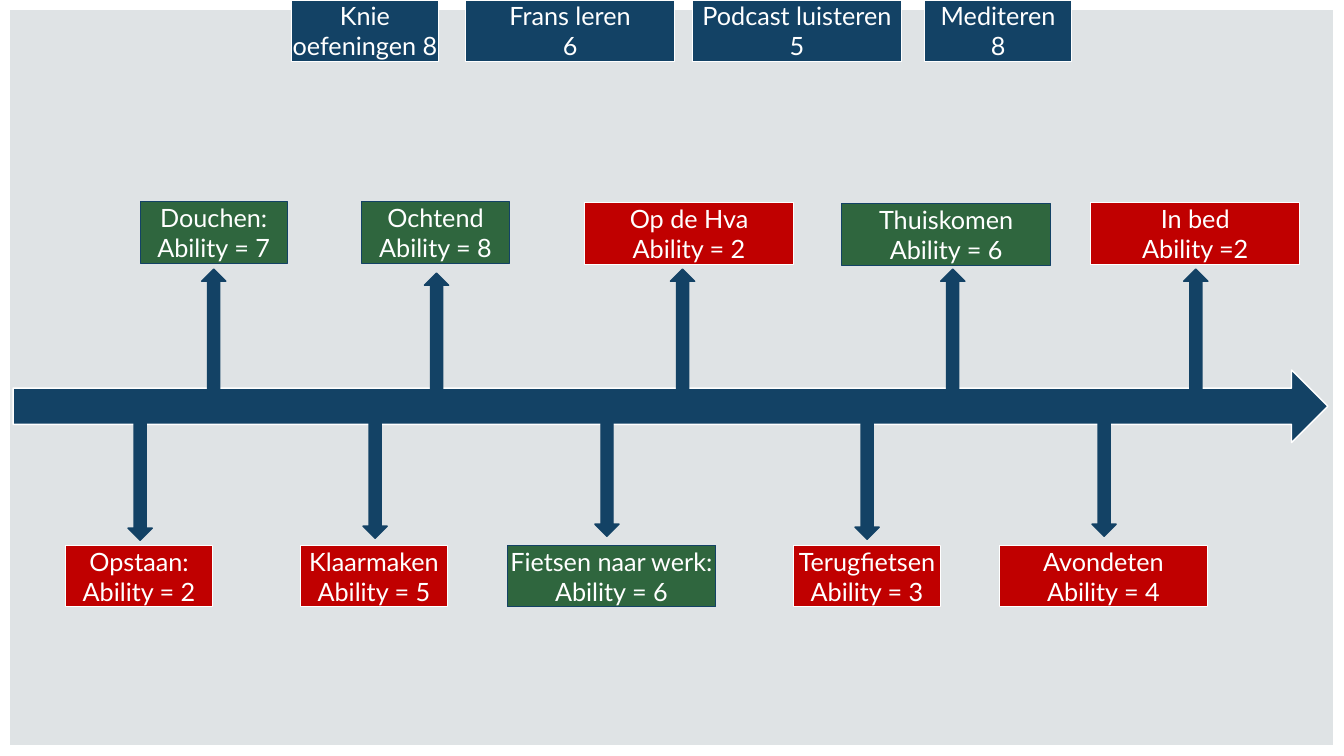
from dataclasses import dataclass

from pptx import Presentation
from pptx.dml.color import RGBColor
from pptx.enum.shapes import MSO_SHAPE as Shape
from pptx.enum.text import MSO_ANCHOR as Anchor, MSO_AUTO_SIZE as AutoSize, PP_ALIGN as Align
from pptx.util import Inches, Pt


@dataclass(frozen=True)
class Theme:
    background: str = "DFE3E5"
    navy: str = "134265"
    red: str = "C00000"
    green: str = "2F663E"
    white: str = "FFFFFF"
    font: str = "Lato"
    size: float = 18
    frame_line: float = 15
    arrow_line: float = 1
    box_line: float = 0.75


THEME = Theme()
WIDTH, HEIGHT = 13.33, 7.5
NARROW, WIDE, BOX_HEIGHT = 1.46, 2.07, 0.61
POINTER_WIDTH, POINTER_HEIGHT = 0.24, 1.25
TIMELINE = (0.13, 3.67, 13.04, 0.72)
HABIT_TOP, LOWER_TOP = 0, 5.41

# Text lines, left edge, box width
HABITS = [
    (("Knie", "oefeningen 8"), 2.89, NARROW),
    (("Frans leren", "6"), 4.62, WIDE),
    (("Podcast luisteren", "5"), 6.87, WIDE),
    (("Mediteren", "8"), 9.17, NARROW),
]
# Text lines, left edge, box width, colour, box top, pointer centre, pointer top
UPPER_EVENTS = [
    (("Douchen:", "Ability = 7"), 1.39, NARROW, THEME.green, 2, 2.12, 2.67),
    (("Ochtend", "Ability = 8"), 3.59, NARROW, THEME.green, 2, 4.33, 2.71),
    (("Op de Hva", "Ability = 2"), 5.8, WIDE, THEME.red, 2.01, 6.77, 2.67),
    (("Thuiskomen", "Ability = 6"), 8.35, WIDE, THEME.green, 2.02, 9.45, 2.67),
    (("In bed", "Ability =2"), 10.82, WIDE, THEME.red, 2.01, 11.86, 2.67),
]
LOWER_EVENTS = [
    (("Opstaan:", "Ability = 2"), 0.65, NARROW, THEME.red, LOWER_TOP, 1.39, 4.11),
    (("Klaarmaken", "Ability = 5"), 2.98, NARROW, THEME.red, LOWER_TOP, 3.72, 4.09),
    (("Fietsen naar werk:", "Ability = 6"), 5.03, WIDE, THEME.green, LOWER_TOP, 6.02, 4.07),
    (("Terugfietsen", "Ability = 3"), 7.87, NARROW, THEME.red, LOWER_TOP, 8.6, 4.1),
    (("Avondeten", "Ability = 4"), 9.91, WIDE, THEME.red, LOWER_TOP, 10.95, 4.07),
]


def add_outline(slide, kind, place, fill, line, weight):
    """Add a preset shape; a fill of None leaves it hollow."""
    outline = slide.shapes.add_shape(kind, *map(Inches, place))
    outline.shadow.inherit = False
    if fill:
        outline.fill.solid()
        outline.fill.fore_color.rgb = RGBColor.from_string(fill)
    else:
        outline.fill.background()
    outline.line.color.rgb = RGBColor.from_string(line)
    outline.line.width = Pt(weight)
    return outline


def add_box(slide, lines, left, top, width, fill):
    border = THEME.navy if fill == THEME.green else THEME.white
    box = add_outline(slide, Shape.RECTANGLE, (left, top, width, BOX_HEIGHT),
                      fill, border, THEME.box_line)
    frame = box.text_frame
    frame.margin_left = frame.margin_top = frame.margin_right = frame.margin_bottom = 0
    frame.word_wrap = True
    frame.auto_size = AutoSize.SHAPE_TO_FIT_TEXT
    frame.vertical_anchor = Anchor.MIDDLE
    frame.text = "\n".join(lines)
    for paragraph in frame.paragraphs:
        paragraph.alignment = Align.CENTER
        for run in paragraph.runs:
            run.font.name = THEME.font
            run.font.size = Pt(THEME.size)
            run.font.color.rgb = RGBColor.from_string(THEME.white)


def add_events(slide, events, rotation):
    for lines, left, width, fill, top, centre, pointer_top in events:
        add_box(slide, lines, left, top, width, fill)
        place = (centre - POINTER_WIDTH / 2, pointer_top, POINTER_WIDTH, POINTER_HEIGHT)
        pointer = add_outline(slide, Shape.UP_ARROW, place,
                              THEME.navy, THEME.navy, THEME.arrow_line)
        pointer.rotation = rotation


def main():
    deck = Presentation()
    deck.slide_width, deck.slide_height = Inches(WIDTH), Inches(HEIGHT)
    slide = deck.slides.add_slide(deck.slide_layouts[6])
    slide.background.fill.solid()
    slide.background.fill.fore_color.rgb = RGBColor.from_string(THEME.background)

    add_outline(slide, Shape.RECTANGLE, (0, 0, WIDTH, HEIGHT),
                None, THEME.white, THEME.frame_line)
    add_outline(slide, Shape.RIGHT_ARROW, TIMELINE,
                THEME.navy, THEME.white, THEME.arrow_line)
    add_events(slide, UPPER_EVENTS, rotation=0)
    add_events(slide, LOWER_EVENTS, rotation=180)
    for lines, left, width in HABITS:
        add_box(slide, lines, left, HABIT_TOP, width, THEME.navy)
    deck.save("out.pptx")


if __name__ == "__main__":
    main()
